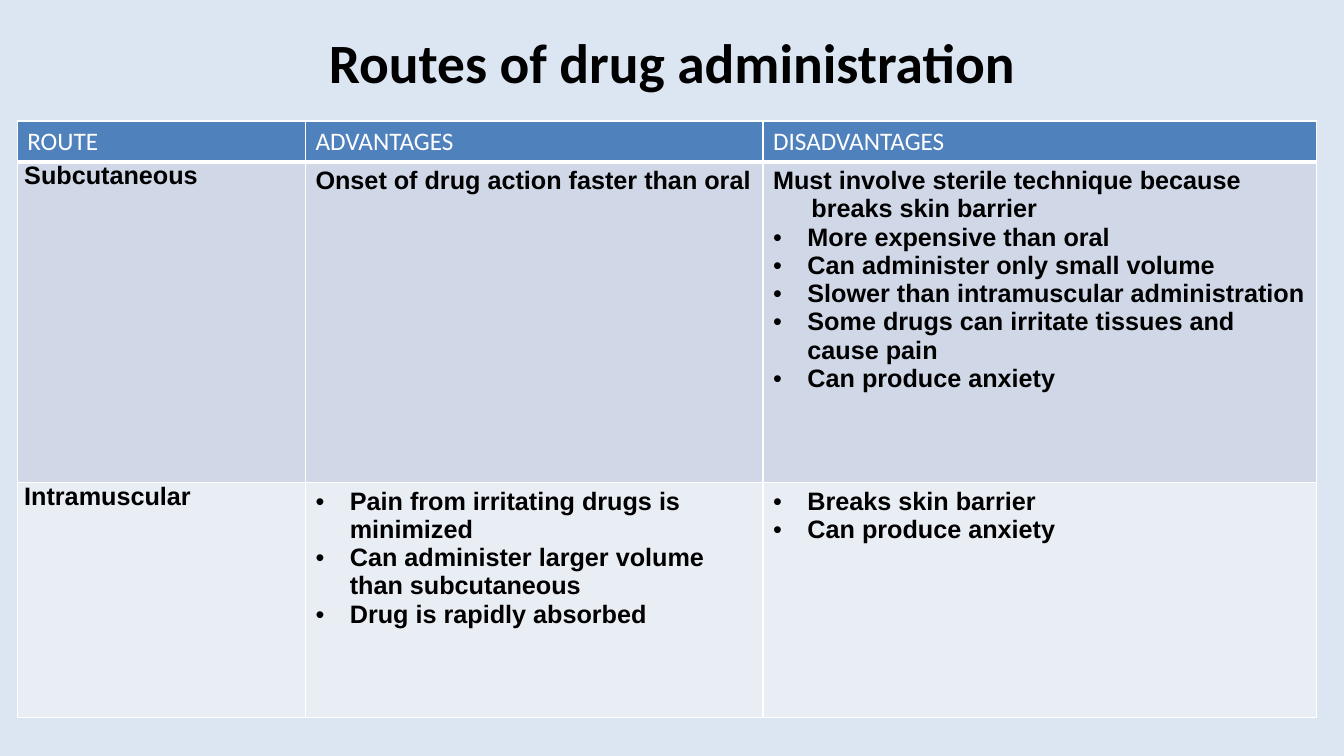
from lxml.etree import SubElement
from pptx import Presentation
from pptx.dml.color import RGBColor
from pptx.enum.text import MSO_ANCHOR, MSO_AUTO_SIZE, PP_ALIGN
from pptx.oxml import parse_xml
from pptx.oxml.ns import nsdecls, qn
from pptx.util import Inches, Pt

BLACK = RGBColor(0x00, 0x00, 0x00)
WHITE = RGBColor(0xFF, 0xFF, 0xFF)
PALE_BLUE = RGBColor(0xDC, 0xE6, 0xF2)
HEADER_BLUE = RGBColor(0x4F, 0x81, 0xBD)
BANDS = [RGBColor(0xD0, 0xD8, 0xE8), RGBColor(0xE9, 0xED, 0xF4)]

TITLE = {"name": "Calibri", "size": Pt(39.6), "bold": True}
HEADER = {"name": "Calibri", "size": Pt(18), "bold": False}
BODY = {"name": "Arial", "size": Pt(18), "bold": True}

# Hanging indents in inches
HANG, BULLET_HANG = 0.38, 0.34

HEADINGS = ["ROUTE", "ADVANTAGES", "DISADVANTAGES"]
# Each row: route, advantages, disadvantages; a leading "•" marks a bullet
ROUTES = [
    ("Subcutaneous",
     ["Onset of drug action faster than oral"],
     ["Must involve sterile technique because breaks skin barrier",
      "•More expensive than oral",
      "•Can administer only small volume",
      "•Slower than intramuscular administration",
      "•Some drugs can irritate tissues and cause pain",
      "•Can produce anxiety"]),
    ("Intramuscular",
     ["•Pain from irritating drugs is minimized",
      "•Can administer larger volume than subcutaneous",
      "•Drug is rapidly absorbed"],
     ["•Breaks skin barrier",
      "•Can produce anxiety"]),
]


class SlideBuilder:
    """Places elements by percentages of the slide's width and height."""

    def __init__(self, prs, background):
        self.prs = prs
        self.s = prs.slides.add_slide(prs.slide_layouts[5])
        fill = self.s.background.fill
        fill.solid()
        fill.fore_color.rgb = background

    def x(self, share):
        return round(self.prs.slide_width * share / 100)

    def y(self, share):
        return round(self.prs.slide_height * share / 100)

    def run(self, p, text, style, color):
        r = p.add_run()
        r.text = text
        for name, value in style.items():
            setattr(r.font, name, value)
        r.font.color.rgb = color

    def title(self, text, left, top, width, height):
        sp = self.s.shapes.title
        sp.left, sp.top = self.x(left), self.y(top)
        sp.width, sp.height = self.x(width), self.y(height)
        tf = sp.text_frame
        tf.auto_size = MSO_AUTO_SIZE.NONE
        tf.vertical_anchor = MSO_ANCHOR.MIDDLE
        p = tf.paragraphs[0]
        p.alignment = PP_ALIGN.CENTER
        self.run(p, text, TITLE, BLACK)

    def table(self, left, top, widths, heights):
        frame = self.s.shapes.add_table(
            len(heights), len(widths), self.x(left), self.y(top),
            self.x(sum(widths)), self.y(sum(heights)))
        table = frame.table
        table.first_row = table.horz_banding = False
        for column, width in zip(table.columns, widths):
            column.width = self.x(width)
        for row, height in zip(table.rows, heights):
            row.height = self.y(height)
        return table

    def cell(self, cell, lines, style, color, fill, bottom=1):
        cell.fill.solid()
        cell.fill.fore_color.rgb = fill
        self.borders(cell, bottom)
        tf = cell.text_frame
        for i, line in enumerate(lines):
            p = tf.add_paragraph() if i else tf.paragraphs[0]
            self.run(p, line.lstrip("•"), style, color)
            if len(lines) > 1 or style is BODY:
                self.hang(p, line.startswith("•"))

    def hang(self, p, bullet):
        indent = Inches(BULLET_HANG if bullet else HANG)
        pPr = p._p.get_or_add_pPr()
        pPr.set("marL", str(indent))
        pPr.set("indent", str(-indent))
        if bullet:
            SubElement(pPr, qn("a:buFont"), typeface="Arial")
            SubElement(pPr, qn("a:buChar"), char="•")

    def borders(self, cell, bottom):
        tcPr = cell._tc.get_or_add_tcPr()
        sides = {"lnL": 1, "lnR": 1, "lnT": 1, "lnB": bottom}
        for i, (side, points) in enumerate(sides.items()):
            tcPr.insert(i, parse_xml(
                f'<a:{side} {nsdecls("a")} w="{Pt(points)}"><a:solidFill>'
                f'<a:srgbClr val="{WHITE}"/></a:solidFill></a:{side}>'))


def main():
    prs = Presentation()
    prs.slide_width, prs.slide_height = Inches(13.33), Inches(7.5)
    slide = SlideBuilder(prs, PALE_BLUE)

    # Title
    slide.title("Routes of drug administration", 16.25, 4, 67.5, 8.25)

    # Table header
    table = slide.table(1.28, 16, [21.45, 34.05, 41.2], [4.95, 42.4, 31.1])
    for col, heading in enumerate(HEADINGS):
        slide.cell(table.cell(0, col), [heading], HEADER, WHITE,
                   HEADER_BLUE, bottom=3)

    # One banded row per route
    for row, (route, *points) in enumerate(ROUTES, start=1):
        band = BANDS[row - 1]
        for col, lines in enumerate([[route], *points]):
            slide.cell(table.cell(row, col), lines, BODY, BLACK, band)
        name = table.cell(row, 0)
        name.margin_left = name.margin_right = Inches(0.07)
        name.margin_top = name.margin_bottom = 0

    prs.save("out.pptx")


if __name__ == "__main__":
    main()
